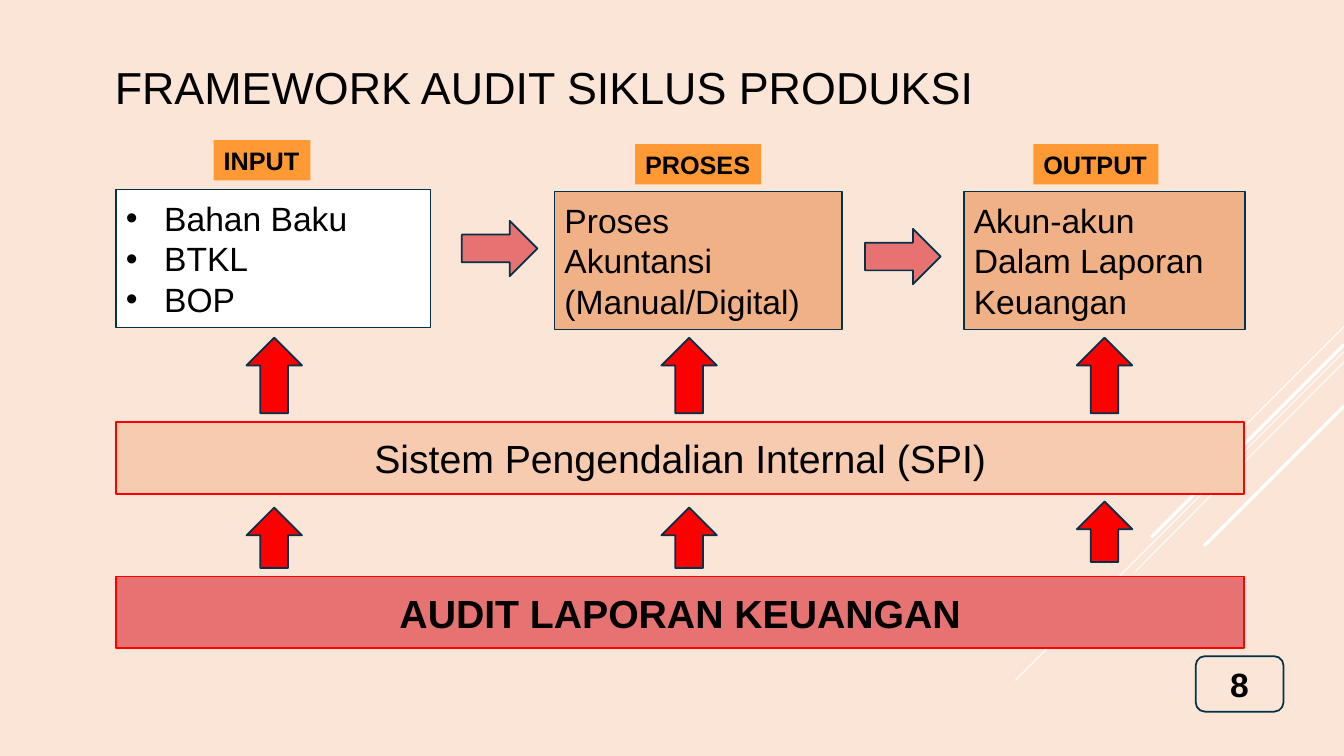
from lxml import etree
from pptx import Presentation
from pptx.dml.color import RGBColor
from pptx.enum.shapes import MSO_CONNECTOR, MSO_SHAPE
from pptx.enum.text import MSO_ANCHOR, MSO_AUTO_SIZE, PP_ALIGN
from pptx.oxml.ns import qn
from pptx.util import Inches, Pt

RECT = MSO_SHAPE.RECTANGLE
ROUNDED = MSO_SHAPE.ROUNDED_RECTANGLE
ARROW = MSO_SHAPE.RIGHT_ARROW
STRAIGHT = MSO_CONNECTOR.STRAIGHT
LEFT, CENTER = PP_ALIGN.LEFT, PP_ALIGN.CENTER
TOP, MIDDLE = MSO_ANCHOR.TOP, MSO_ANCHOR.MIDDLE
FIT_SHAPE = MSO_AUTO_SIZE.SHAPE_TO_FIT_TEXT

FONT = "Arial"
BLACK, WHITE, RED = "000000", "FFFFFF", "FF0000"
CREAM, PEACH, APRICOT = "FAE5D7", "F6CBAF", "F1B187"
CORAL, ORANGE, NAVY = "E67272", "FF9933", "043148"


def color(value):
    return RGBColor.from_string(value)


def write(sp, lines, size, bold=False, align=LEFT, anchor=MIDDLE):
    tf = sp.text_frame
    tf.text = "\n".join(lines)
    tf.word_wrap = True
    tf.vertical_anchor = anchor
    for p in tf.paragraphs:
        p.alignment = align
        for r in p.runs:
            r.font.name = FONT
            r.font.size = Pt(size)
            r.font.bold = bold
            r.font.color.rgb = color(BLACK)


def add_bullets(sp):
    for p in sp.text_frame.paragraphs:
        pPr = p._p.get_or_add_pPr()
        pPr.set("marL", str(Inches(0.38)))
        pPr.set("indent", str(Inches(-0.38)))
        etree.SubElement(pPr, qn("a:buFont")).set("typeface", FONT)
        etree.SubElement(pPr, qn("a:buChar")).set("char", "•")


def add_block(s, kind, at, fill, line=None):
    sp = s.shapes.add_shape(kind, *map(Inches, at))
    sp.shadow.inherit = False
    sp.fill.solid()
    sp.fill.fore_color.rgb = color(fill)
    if line:
        sp.line.color.rgb = color(line)
        sp.line.width = Pt(1.25)
    else:
        sp.line.fill.background()
    return sp


def add_ray(s, x1, y1, x2, y2, width):
    ray = s.shapes.add_connector(STRAIGHT, *map(Inches, (x1, y1, x2, y2)))
    ray.line.color.rgb = color(WHITE)
    ray.line.width = Pt(width)
    etree.SubElement(ray._element.spPr, qn("a:effectLst"))


def add_up_arrow(s, center_x, center_y, length):
    at = (center_x - length / 2, center_y - 0.275, length, 0.55)
    add_block(s, ARROW, at, RED, NAVY).rotation = 270


def add_band(s, top, text, fill, bold):
    sp = add_block(s, RECT, (1.15, top, 11.19, 0.71), fill, RED)
    write(sp, [text], 28, bold, CENTER)


def add_label(s, left, top, width, text):
    sp = add_block(s, RECT, (left, top, width, 0.4), ORANGE)
    write(sp, [text], 18, True, anchor=TOP)
    sp.text_frame.word_wrap = False
    sp.text_frame.auto_size = FIT_SHAPE


def add_stage(s, left, top, width, lines, fill):
    sp = add_block(s, RECT, (left, top, width, 1.37), fill, NAVY)
    write(sp, lines, 24)
    return sp


def add_title(s, text):
    sp = s.shapes.add_textbox(*map(Inches, (1.04, 0.54, 10.45, 0.64)))
    write(sp, [text], 32, anchor=TOP)
    sp.text_frame.auto_size = FIT_SHAPE


def main():
    prs = Presentation()
    prs.slide_width, prs.slide_height = Inches(13.33), Inches(7.5)
    s = prs.slides.add_slide(prs.slide_layouts[6])
    s.background.fill.solid()
    s.background.fill.fore_color.rgb = color(CREAM)

    for y1, x2, y2, width in [(3.24, 12.33, 4.24, 0.75), (3.49, 10.07, 6.75, 0.75),
                              (3.59, 11.26, 5.67, 0.75), (3.42, 11.42, 5.33, 2.25),
                              (4.03, 11.94, 5.42, 2.25)]:
        add_ray(s, 13.33, y1, x2, y2, width)

    number = add_block(s, ROUNDED, (11.86, 6.51, 0.87, 0.55), CREAM, NAVY)
    write(number, ["8"], 24, True, CENTER)

    add_band(s, 4.19, "Sistem Pengendalian Internal (SPI)", PEACH, False)
    add_band(s, 5.72, "AUDIT LAPORAN KEUANGAN", CORAL, True)

    for center_x, lower_y in [(2.72, 5.335), (6.835, 5.335), (10.955, 5.275)]:
        add_up_arrow(s, center_x, 3.725, 0.75)
        add_up_arrow(s, center_x, lower_y, 0.6)
    for left, top in [(4.58, 2.19), (8.58, 2.27)]:
        add_block(s, ARROW, (left, top, 0.75, 0.55), CORAL, NAVY)

    add_title(s, "FRAMEWORK AUDIT SIKLUS PRODUKSI")
    inputs = add_stage(s, 1.15, 1.88, 3.12, ["Bahan Baku", "BTKL", "BOP"], WHITE)
    add_bullets(inputs)
    add_stage(s, 5.5, 1.9, 2.85, ["Proses", "Akuntansi", "(Manual/Digital)"], APRICOT)
    add_stage(s, 9.56, 1.9, 2.79, ["Akun-akun", "Dalam Laporan Keuangan"], APRICOT)

    add_label(s, 2.12, 1.39, 0.96, "INPUT")
    add_label(s, 6.3, 1.43, 1.25, "PROSES")
    add_label(s, 10.25, 1.43, 1.24, "OUTPUT")

    prs.save("out.pptx")


if __name__ == "__main__":
    main()
